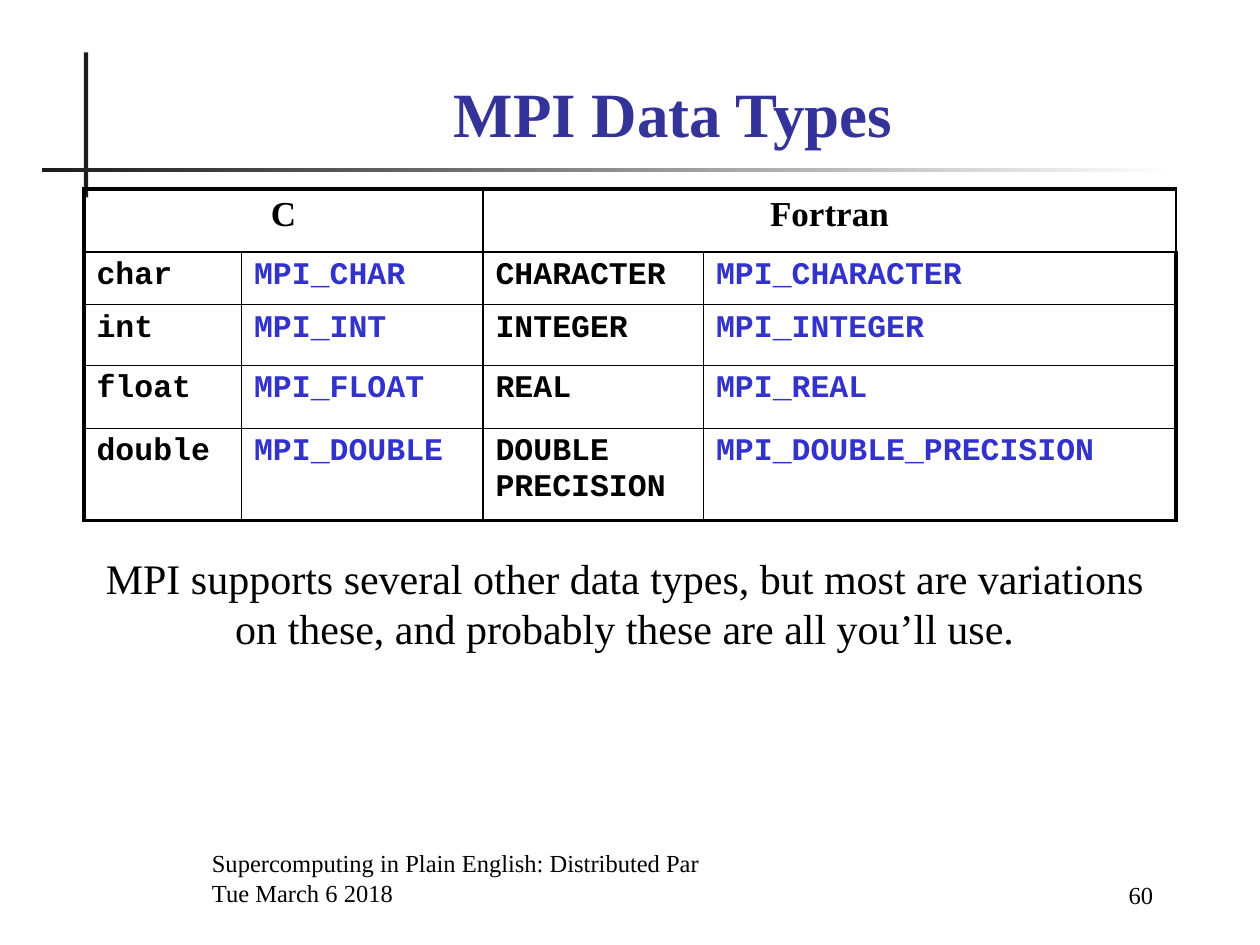
from dataclasses import dataclass

from lxml.etree import SubElement
from pptx import Presentation
from pptx.dml.color import RGBColor
from pptx.enum.shapes import MSO_SHAPE as Preset
from pptx.enum.text import MSO_ANCHOR as Anchor, PP_ALIGN as Align
from pptx.oxml.ns import qn
from pptx.util import Inches, Pt


@dataclass(frozen=True)
class Theme:
    serif: str = "Times New Roman"
    mono: str = "Courier New"
    ink: str = "000000"
    title: str = "333399"
    constant: str = "3333CC"
    rule: str = "1C1C1C"
    paper: str = "FFFFFF"
    title_size: int = 36
    note_size: int = 24
    head_size: int = 20
    code_size: int = 18
    footer_size: int = 14
    thin: float = 1
    thick: float = 2.25


def grid(units):
    """Grid of 120 columns by 90 rows: twelve units to the inch."""
    return Inches(units / 12)


class SlideBuilder:
    def __init__(self, presentation, theme):
        self.theme = theme
        self.slide = presentation.slides.add_slide(presentation.slide_layouts[6])

    def add_lines(self, frame, lines, size, align=Align.LEFT, font=None, color=None, bold=False):
        for index, line in enumerate(lines):
            paragraph = frame.add_paragraph() if index else frame.paragraphs[0]
            paragraph.alignment = align
            run = paragraph.add_run()
            run.text = line
            run.font.name = font or self.theme.serif
            run.font.size = Pt(size)
            run.font.bold = bold
            run.font.color.rgb = RGBColor.from_string(color or self.theme.ink)

    def text(self, box, lines, size, anchor=Anchor.TOP, **style):
        frame = self.slide.shapes.add_textbox(*map(grid, box)).text_frame
        frame.word_wrap = True
        frame.vertical_anchor = anchor
        self.add_lines(frame, lines, size, **style)

    def bar(self, box, fade=False):
        shape = self.slide.shapes.add_shape(Preset.RECTANGLE, *map(grid, box))
        shape.shadow.inherit = False
        shape.line.fill.background()
        start = RGBColor.from_string(self.theme.rule)
        if fade:
            shape.fill.gradient()
            shape.fill.gradient_angle = 0
            colors = (start, RGBColor.from_string(self.theme.paper))
            for position, (stop, color) in enumerate(zip(shape.fill.gradient_stops, colors)):
                stop.position = position
                stop.color.rgb = color
        else:
            shape.fill.solid()
            shape.fill.fore_color.rgb = start

    def border(self, cell, outer):
        """Draw the four sides of a cell, thick where the side is in outer."""
        properties = cell._tc.get_or_add_tcPr()
        for side in "LRTB":
            width = self.theme.thick if side in outer else self.theme.thin
            line = SubElement(properties, qn(f"a:ln{side}"), w=str(Pt(width)))
            fill = SubElement(line, qn("a:solidFill"))
            SubElement(fill, qn("a:srgbClr"), val=self.theme.ink)

    def table(self, left, top, widths, heights, heads, rows):
        """Each head spans two columns: a type and its MPI constant."""
        theme = self.theme
        table = self.slide.shapes.add_table(
            len(heights), len(widths), grid(left), grid(top),
            grid(sum(widths)), grid(sum(heights))).table
        table.first_row = table.horz_banding = False
        for column, width in zip(table.columns, widths):
            column.width = grid(width)
        for row, height in zip(table.rows, heights):
            row.height = grid(height)
        last_row, last_column = len(heights) - 1, len(widths) - 1
        for r in range(len(heights)):
            for c in range(len(widths)):
                edges = {"L": c == 0, "R": c == last_column, "T": r == 0, "B": r == last_row}
                cell = table.cell(r, c)
                self.border(cell, [side for side, is_outer in edges.items() if is_outer])
                cell.fill.background()
        for index, head in enumerate(heads):
            cell = table.cell(0, 2 * index)
            cell.merge(table.cell(0, 2 * index + 1))
            self.add_lines(cell.text_frame, [head], theme.head_size, Align.CENTER, bold=True)
        for r, row in enumerate(rows, start=1):
            for c, word in enumerate(row):
                self.add_lines(table.cell(r, c).text_frame, [word], theme.code_size,
                               font=theme.mono, bold=True,
                               color=theme.constant if c % 2 else theme.ink)


def main():
    presentation = Presentation()
    presentation.slide_width, presentation.slide_height = grid(120), grid(90)
    theme = Theme()
    builder = SlideBuilder(presentation, theme)

    builder.bar((8, 5, 0.4, 13.8))
    builder.bar((4, 16, 108, 0.4), fade=True)
    builder.text((13, 6, 102.2, 8.9), ["MPI Data Types"], theme.title_size, Anchor.BOTTOM,
                 align=Align.CENTER, color=theme.title, bold=True)

    type_pairs = [("char", "CHARACTER"), ("int", "INTEGER"),
                  ("float", "REAL"), ("double", "DOUBLE PRECISION")]
    rows = [(c_type, f"MPI_{c_type.upper()}", fortran, f"MPI_{fortran.replace(' ', '_')}")
            for c_type, fortran in type_pairs]
    builder.table(8, 18, widths=(15, 23, 21, 45), heights=(6, 5, 5.8, 6, 8.8),
                  heads=("C", "Fortran"), rows=rows)

    builder.text((19, 81, 73, 6),
                 ["Supercomputing in Plain English: Distributed Par", "Tue March 6 2018"],
                 theme.footer_size, Anchor.BOTTOM)
    builder.text((94, 81.2, 17, 6), ["60"], theme.footer_size, Anchor.BOTTOM, align=Align.RIGHT)
    builder.text((7, 52, 105, 10.9),
                 ["MPI supports several other data types, but most are variations on these, "
                  "and probably these are all you’ll use."],
                 theme.note_size, align=Align.CENTER)
    presentation.save("out.pptx")


if __name__ == "__main__":
    main()
